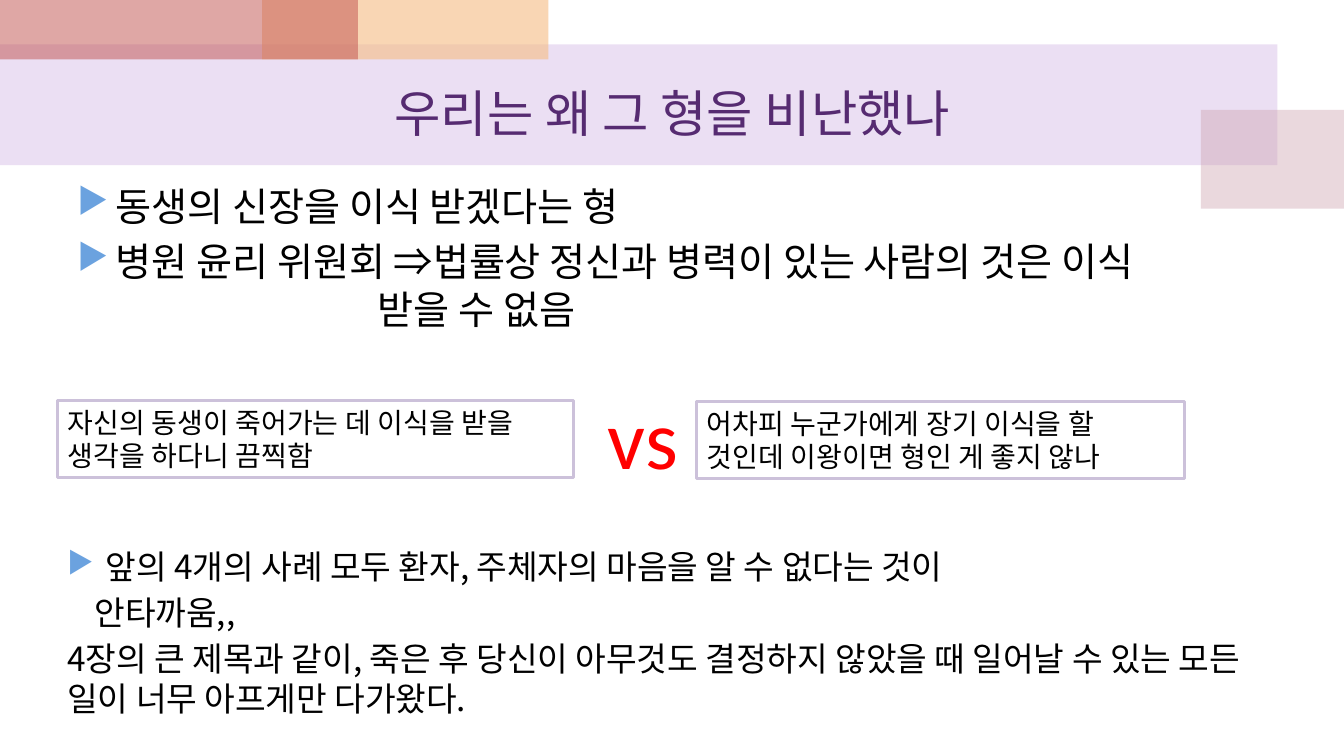
from lxml import etree
from pptx import Presentation
from pptx.dml.color import RGBColor
from pptx.enum import shapes, text
from pptx.oxml.ns import qn
from pptx.util import Inches, Pt

BLACK = RGBColor(0, 0, 0)
RED = RGBColor(0xFF, 0, 0)
PLUM = RGBColor(0x56, 0x2B, 0x71)
LILAC = RGBColor(0xBF, 0x98, 0xD8)
ROSE = RGBColor(0xCC, 0x9E, 0xAC)
ORANGE = RGBColor(0xF5, 0xBC, 0x83)
BRICK = RGBColor(0xC0, 0x50, 0x4D)
FRAME = RGBColor(0xCC, 0xC1, 0xDA)
BULLET = RGBColor(0x6B, 0xA2, 0xDF)
KOREAN = "Noto Sans CJK KR"


def write(paragraph, words, size, color=BLACK, font="Calibri"):
    run = paragraph.add_run()
    run.text = words
    for name, value in {"name": font, "size": Pt(size)}.items():
        setattr(run.font, name, value)
    run.font.color.rgb = color
    etree.SubElement(run.font._element, qn("a:ea"), typeface="Calibri")


def add_text_box(left, top, width, height):
    box = slide.shapes.add_textbox(*map(Inches, (left, top, width, height)))
    box.text_frame.word_wrap = True
    return box


presentation = Presentation()
presentation.slide_width = Inches(13.33)
presentation.slide_height = Inches(7.5)
slide = presentation.slides.add_slide(presentation.slide_layouts[5])
title = slide.shapes.title

# Translucent header blocks: place, colour, opacity in percent
for place, color, opacity in [
    ((0, 0.44, 12.67, 1.2), LILAC, 30),
    ((11.91, 1.09, 1.43, 0.98), ROSE, 40),
    ((2.6, 0, 2.84, 0.59), ORANGE, 60),
    ((0, 0, 3.55, 0.59), BRICK, 50),
]:
    block = slide.shapes.add_shape(shapes.MSO_SHAPE.RECTANGLE, *map(Inches, place))
    block.shadow.inherit = False
    block.line.fill.background()
    block.fill.solid()
    block.fill.fore_color.rgb = color
    tint = block._element.spPr.find(".//" + qn("a:srgbClr"))
    etree.SubElement(tint, qn("a:alpha"), val=str(opacity * 1000))

# Title, brought in front of the blocks
slide.shapes._spTree.append(title._element)
for name, value in {"left": 0.67, "top": 0.59, "width": 12, "height": 1.05}.items():
    setattr(title, name, Inches(value))
title.text_frame.vertical_anchor = text.MSO_ANCHOR.MIDDLE
heading = title.text_frame.paragraphs[0]
heading.alignment = text.PP_ALIGN.CENTER
write(heading, "우리는 왜 그 형을 비난했나", 36, PLUM)

# Bulleted blocks: place, size, line pitch, then (words, indent, bullet, gap, font)
for place, size, pitch, lines in [
    ((0.67, 1.75, 12, 1.62), 28, 34, [
        ("동생의 신장을 이식 받겠다는 형", 0.38, True, 5.6, "Calibri"),
        ("병원 윤리 위원회 ⇒법률상 정신과 병력이 있는 사람의 것은 이식", 0.38, True, 5.6, KOREAN),
        ("받을 수 없음", 2.98, False, 0, KOREAN),
    ]),
    ((0.57, 5.37, 12, 1.62), 23.8, 28.3, [
        ("앞의 4개의 사례 모두 환자, 주체자의 마음을 알 수 없다는 것이", 0.38, True, 4.8, KOREAN),
        ("안타까움,,", 0.27, False, 4.8, KOREAN),
        ("4장의 큰 제목과 같이, 죽은 후 당신이 아무것도 결정하지 않았을 때 "
         "일어날 수 있는 모든 일이 너무 아프게만 다가왔다.", 0, False, 4.8, KOREAN),
    ]),
]:
    frame = add_text_box(*place).text_frame
    for index, (words, indent, bulleted, gap, font) in enumerate(lines):
        paragraph = frame.add_paragraph() if index else frame.paragraphs[0]
        paragraph.space_before = Pt(gap)
        paragraph.line_spacing = Pt(pitch)
        properties = paragraph._p.get_or_add_pPr()
        properties.set("marL", str(Inches(indent)))
        if bulleted:
            properties.set("indent", str(-Inches(indent)))
            bullet_color = etree.SubElement(properties, qn("a:buClr"))
            etree.SubElement(bullet_color, qn("a:srgbClr"), val=str(BULLET))
            etree.SubElement(properties, qn("a:buSzPct"), val="90000")
            etree.SubElement(properties, qn("a:buChar"), char="▶")
        write(paragraph, words, size, font=font)

# Two opposing opinions in frames
for place, words in [
    ((0.57, 3.97, 5.12, 0.77), "자신의 동생이 죽어가는 데 이식을 받을 생각을 하다니 끔찍함"),
    ((6.91, 3.98, 4.84, 0.77), "어차피 누군가에게 장기 이식을 할 것인데 이왕이면 형인 게 좋지 않나"),
]:
    opinion = add_text_box(*place)
    opinion.line.color.rgb = FRAME
    opinion.line.width = Pt(2.25)
    write(opinion.text_frame.paragraphs[0], words, 20)

# "vs" between the opinions
versus = add_text_box(5.93, 3.78, 0.97, 1.06).text_frame.paragraphs[0]
versus.space_before = Pt(12)
write(versus, "vs", 60, RED)

presentation.save("out.pptx")
